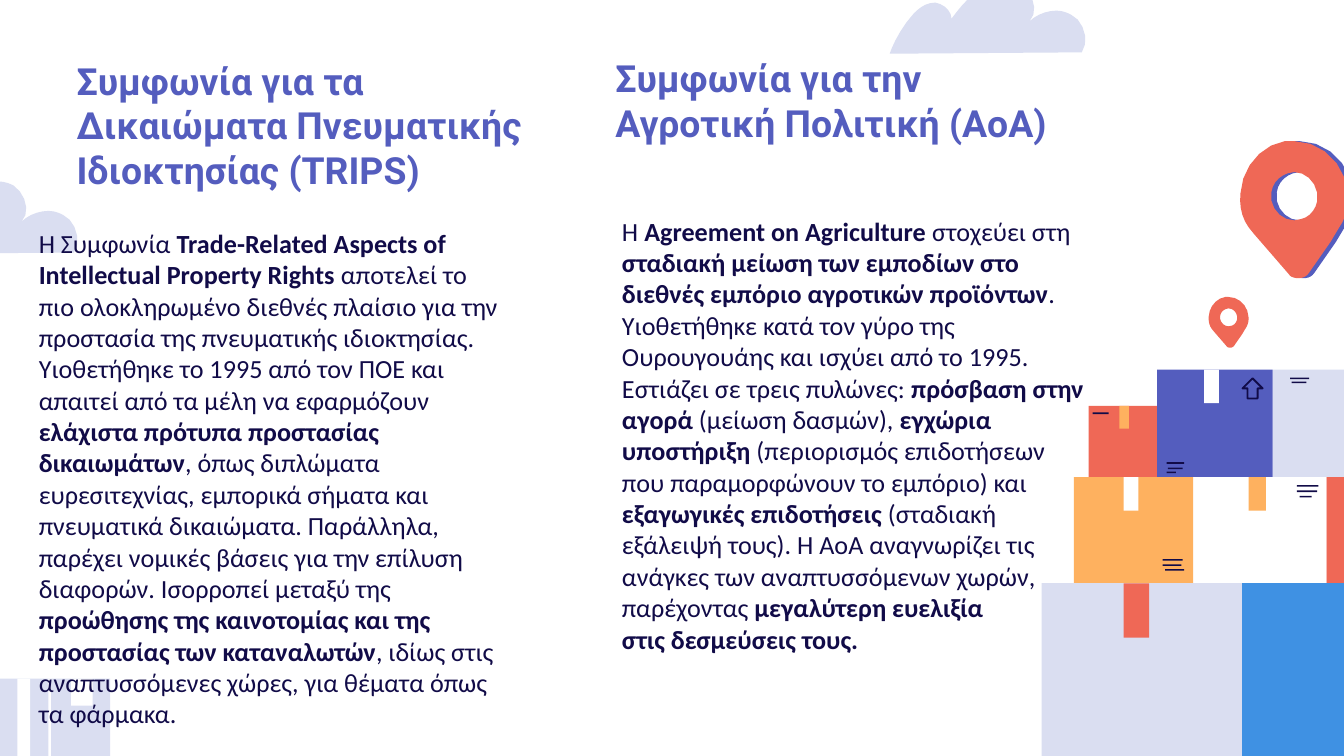
"""Build a slide comparing the TRIPS and AoA agreements beside a stack of parcels."""
from pptx import Presentation
from pptx.dml.color import RGBColor
from pptx.enum.shapes import MSO_SHAPE
from pptx.enum.text import MSO_ANCHOR, MSO_AUTO_SIZE, PP_ALIGN
from pptx.util import Inches, Pt

COLUMNS, ROWS = 1000, 562.5
CELL = Inches(10) / COLUMNS

NAVY = RGBColor(0x11, 0x0B, 0x48)
INDIGO = RGBColor(0x54, 0x5D, 0xBE)
CORAL = RGBColor(0xEF, 0x68, 0x56)
AMBER = RGBColor(0xFE, 0xB1, 0x5F)
LAVENDER = RGBColor(0xDA, 0xDE, 0xF1)
BLUE = RGBColor(0x3F, 0x91, 0xE3)
WHITE = RGBColor(0xFF, 0xFF, 0xFF)

CLOUD = [[
    (86, 0), (80, 0, 73, 2, 68, 6), (59, 11, 52, 20, 46, 28),
    (46, 22, 40, 17, 34, 16), (27, 16, 22, 20, 18, 24),
    (8, 35, 2, 48, 0, 54), (143, 53), (149, 44, 144, 29, 135, 25),
    (131, 23, 128, 22, 124, 22), (117, 22, 109, 25, 104, 30),
    (111, 23, 107, 9, 98, 3), (94, 1, 90, 0, 86, 0),
]]
PIN = [
    [(41, 0), (34, 0), (16, 3, 2, 20, 1, 39),
     (0, 48, 2, 57, 7, 64), (11, 69), (37, 99),
     (38, 101, 41, 102, 44, 102), (47, 102, 50, 101, 52, 98), (68, 75),
     (74, 65), (79, 58, 82, 49, 81, 40), (80, 18, 62, 0, 41, 0)],
    [(41, 23), (51, 23, 60, 33, 58, 45), (57, 51, 52, 57, 46, 58),
     (41, 59), (31, 59, 22, 49, 24, 38), (25, 31, 30, 26, 36, 24), (41, 23)],
]
BOXES = [
    (810, 302, 57, 53, CORAL, (23, 7, 17, AMBER)),
    (947, 275, 115, 80, LAVENDER, None),
    (861, 275, 86, 80, INDIGO, (35, 11, 25, WHITE)),
    (799, 355, 89, 79, AMBER, (37, 11, 25, WHITE)),
    (987, 355, 133, 79, CORAL, None),
    (888, 355, 99, 79, WHITE, (41, 13, 25, AMBER)),
    (924, 434, 199, 128.5, BLUE, None),
    (775, 434, 149, 128.5, LAVENDER, (61, 19, 40.5, CORAL)),
]
MARKS = [
    (813, 307, 12), (865, 416, 15), (865, 420, 14), (867, 423.5, 14),
    (868, 344, 13), (869, 348, 11), (868, 351, 7), (960, 281, 14),
    (961, 284, 11), (965, 361, 16), (965, 365, 15), (967, 369, 9),
]
STRIPS = [(13, 505, 9.5, 57.5), (53, 505, 16, 20), (36, 505, 2, 57.5)]

TRIPS_TITLE = "Συμφωνία για τα Δικαιώματα Πνευματικής Ιδιοκτησίας (TRIPS)"
AOA_TITLE = "Συμφωνία για την Αγροτική Πολιτική (AoA)"
TRIPS_TEXT = [[
    ("Η Συμφωνία ", False),
    ("Trade-Related Aspects of Intellectual Property Rights ", True),
    ("αποτελεί το πιο ολοκληρωμένο διεθνές πλαίσιο για την προστασία της "
     "πνευματικής ιδιοκτησίας. Υιοθετήθηκε το 1995 από τον ΠΟΕ και απαιτεί "
     "από τα μέλη να εφαρμόζουν ", False),
    ("ελάχιστα πρότυπα προστασίας δικαιωμάτων", True),
    (", όπως διπλώματα ευρεσιτεχνίας, εμπορικά σήματα και πνευματικά "
     "δικαιώματα. Παράλληλα, παρέχει νομικές βάσεις για την επίλυση "
     "διαφορών. Ισορροπεί μεταξύ της ", False),
    ("προώθησης της καινοτομίας και της προστασίας των καταναλωτών", True),
    (", ιδίως στις αναπτυσσόμενες χώρες, για θέματα όπως τα φάρμακα.", False),
]]
AOA_TEXT = [
    [("Η ", False),
     ("Agreement on Agriculture ", True),
     ("στοχεύει στη ", False),
     ("σταδιακή μείωση των εμποδίων στο διεθνές εμπόριο αγροτικών προϊόντων",
      True),
     (". Υιοθετήθηκε κατά τον γύρο της Ουρουγουάης και ισχύει από το 1995. "
      "Εστιάζει σε τρεις πυλώνες: ", False),
     ("πρόσβαση στην αγορά ", True),
     ("(μείωση δασμών), ", False),
     ("εγχώρια υποστήριξη ", True),
     ("(περιορισμός επιδοτήσεων", False)],
    [("που παραμορφώνουν το εμπόριο) και ", False),
     ("εξαγωγικές επιδοτήσεις ", True),
     ("(σταδιακή εξάλειψή τους). Η AoA αναγνωρίζει τις ανάγκες των "
      "αναπτυσσόμενων χωρών, παρέχοντας ", False),
     ("μεγαλύτερη ευελιξία", True)],
    [("στις δεσμεύσεις τους.", True)],
]


def grid(*values):
    return [round(value * CELL) for value in values]


def paint(shape, colour):
    shape.shadow.inherit = False
    shape.fill.solid()
    shape.fill.fore_color.rgb = colour
    shape.line.fill.background()


def add_block(slide, left, top, width, height, colour):
    block = slide.shapes.add_shape(MSO_SHAPE.RECTANGLE, *grid(left, top, width, height))
    paint(block, colour)


def trace(contour, steps=5):
    points = [contour[0]]
    for segment in contour[1:]:
        if len(segment) == 2:
            points.append(segment)
            continue
        controls = [points[-1], segment[:2], segment[2:4], segment[4:]]
        for step in range(1, steps + 1):
            t = step / steps
            weights = ((1 - t) ** 3, 3 * t * (1 - t) ** 2, 3 * t * t * (1 - t), t ** 3)
            points.append(tuple(
                sum(weight * control[axis] for weight, control in zip(weights, controls))
                for axis in (0, 1)))
    return points


def add_outline(slide, contours, left, top, colour, scale=1):
    builder = None
    for contour in contours:
        points = [tuple(grid(left + x * scale, top + y * scale)) for x, y in trace(contour)]
        if builder is None:
            builder = slide.shapes.build_freeform(*points[0])
        else:
            builder.move_to(*points[0])
        builder.add_line_segments(points[1:], close=True)
    paint(builder.convert_to_shape(), colour)


def add_bars(slide, bars, colour):
    contours = [
        [(left, top), (left + width, top), (left + width, top + height), (left, top + height)]
        for left, top, width, height in bars]
    add_outline(slide, contours, 0, 0, colour)


def add_box(slide, left, top, width, height, colour, tape):
    add_block(slide, left, top, width, height, colour)
    if tape:
        offset, tape_width, tape_height, tape_colour = tape
        add_block(slide, left + offset, top, tape_width, tape_height, tape_colour)


def add_up_arrow(slide, left, top, size):
    arrow = slide.shapes.add_shape(MSO_SHAPE.UP_ARROW, *grid(left, top, size, size))
    arrow.shadow.inherit = False
    arrow.fill.background()
    arrow.line.color.rgb = NAVY
    arrow.line.width = Pt(1)


def write(shape, area, paragraphs, font, size, colour, anchor):
    shape.left, shape.top, shape.width, shape.height = grid(*area)
    frame = shape.text_frame
    frame.word_wrap = True
    frame.auto_size = MSO_AUTO_SIZE.NONE
    frame.vertical_anchor = anchor
    frame.margin_left, frame.margin_top, frame.margin_right, frame.margin_bottom = grid(*[10] * 4)
    for index, runs in enumerate(paragraphs):
        paragraph = frame.add_paragraph() if index else frame.paragraphs[0]
        paragraph.alignment = PP_ALIGN.LEFT
        for text, bold in runs:
            run = paragraph.add_run()
            run.text = text
            run.font.name = font
            run.font.size = Pt(size)
            run.font.bold = bold
            run.font.color.rgb = colour


def write_heading(shape, area, text):
    write(shape, area, [[(text, True)]], "Roboto", 20, INDIGO, MSO_ANCHOR.BOTTOM)


def add_body(slide, area, paragraphs):
    box = slide.shapes.add_textbox(*grid(*area))
    write(box, area, paragraphs, "Calibri", 14, NAVY, MSO_ANCHOR.TOP)


def add_scenery(slide):
    for left, colour in ((926, INDIGO), (922, CORAL)):
        add_outline(slide, PIN, left, 105, colour)
    for left, top in ((662, -14), (-88, 135)):
        add_outline(slide, CLOUD, left, top, LAVENDER)
    add_block(slide, 0, 505, 82, 57.5, LAVENDER)
    add_bars(slide, STRIPS, WHITE)


def add_parcels(slide):
    for box in BOXES:
        add_box(slide, *box)
    add_bars(slide, [(*mark, 1.2) for mark in MARKS], NAVY)
    add_up_arrow(slide, 924.5, 281.5, 15)
    add_outline(slide, PIN, 899, 221, CORAL, scale=0.37)


def main():
    presentation = Presentation()
    presentation.slide_width, presentation.slide_height = grid(COLUMNS, ROWS)
    slide = presentation.slides.add_slide(presentation.slide_layouts[5])
    add_scenery(slide)
    add_parcels(slide)
    write_heading(slide.shapes.title, (47, 42, 359, 111), TRIPS_TITLE)
    aoa_area = (448, 39, 368, 79)
    write_heading(slide.shapes.add_textbox(*grid(*aoa_area)), aoa_area, AOA_TITLE)
    add_body(slide, (19, 159, 369, 409), TRIPS_TEXT)
    add_body(slide, (453, 150, 370, 361), AOA_TEXT)
    presentation.save("out.pptx")


if __name__ == "__main__":
    main()
